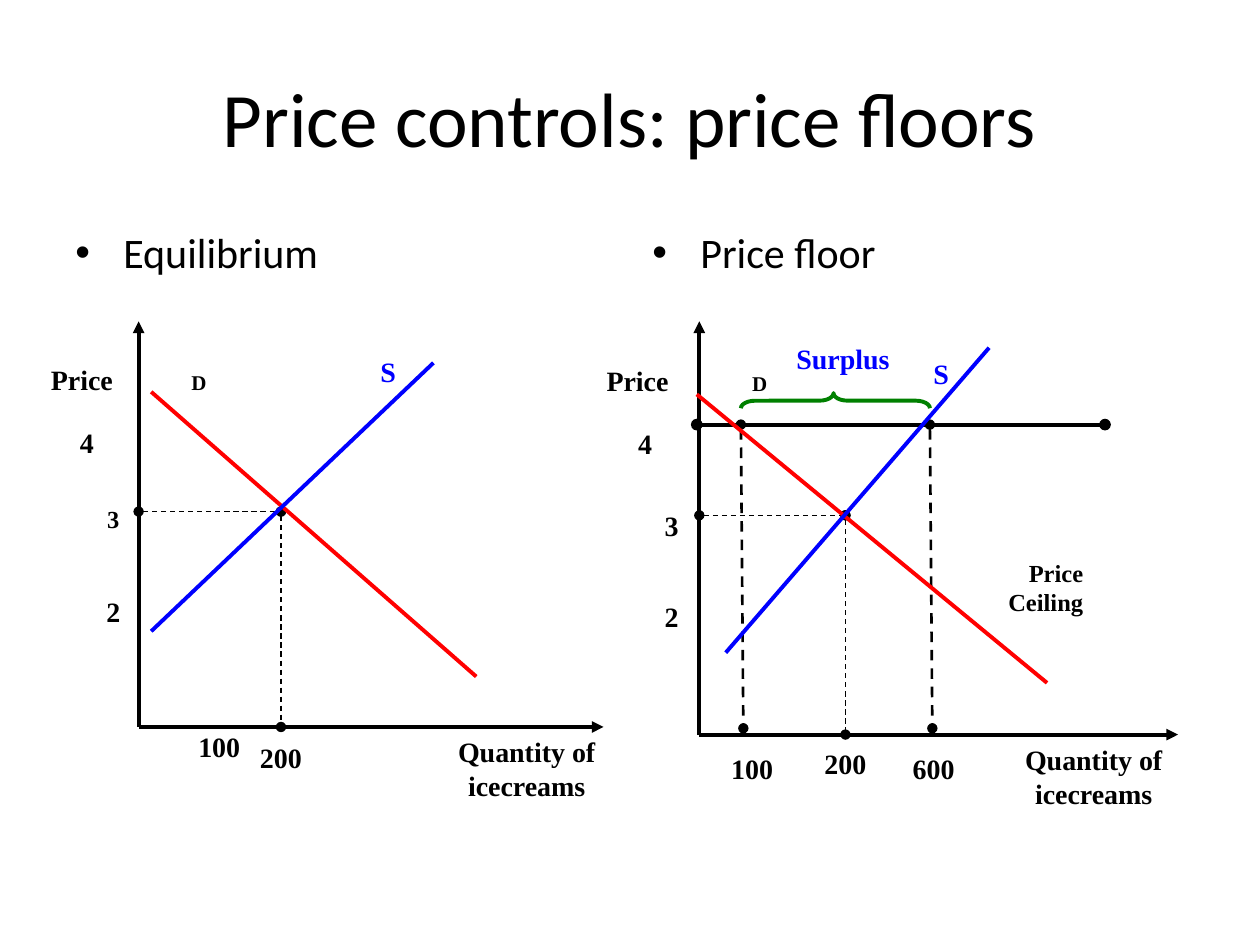
from pptx import Presentation
from pptx import util as u
from pptx.dml.color import RGBColor
from pptx.enum import dml, shapes, text
from pptx.oxml import ns, xmlchemy

COLORS = {"ink": "000000", "demand": "FF0000", "supply": "0000FF", "surplus": "008000"}
ALIGN = text.PP_ALIGN
LABEL = {"name": "Times New Roman", "bold": True}
HEADING = {"name": "Calibri", "bold": False}
BOX_HEIGHT = 0.3

# Line kinds: color, width in points, dashed, ends (at start, at finish)
LINES = {
    "axis": ("ink", 2.25, False, (None, "triangle")),
    "guide": ("ink", 0.75, True, ("oval", "oval")),
    "quantity": ("ink", 1.5, True, ("oval", "oval")),
    "floor": ("ink", 2.25, False, ("oval", "oval")),
    "demand": ("demand", 2.25, False, (None, None)),
    "supply": ("supply", 2.25, False, (None, None)),
}

# Each chart: axis corner and ends, equilibrium point, curves and labels.
# A label is text, center x, center y, then size and color where they differ.
EQUILIBRIUM = {
    "origin": (1.1, 5.77), "top": 2.55, "right": 4.79, "balance": (2.23, 4.06),
    "demand": (1.2, 3.11, 3.78, 5.37), "supply": (1.2, 5.01, 3.44, 2.88),
    "labels": [
        ("Price", 0.65, 3.01), ("4", 0.69, 3.51), ("3", 0.9, 4.12, 14), ("2", 0.9, 4.85),
        ("D", 1.58, 3.03, 12), ("S", 3.08, 2.95, 16, "supply"),
        ("100", 1.74, 5.92), ("200", 2.23, 6.01), ("Quantity of\vicecreams", 4.18, 6.1),
    ],
}
PRICE_FLOOR = {
    "origin": (5.55, 5.83), "top": 2.55, "right": 9.35, "balance": (6.71, 4.09),
    "demand": (5.53, 3.13, 8.31, 5.42), "supply": (5.76, 5.18, 7.85, 2.76),
    "labels": [
        ("Price", 5.06, 3.02), ("4", 5.12, 3.52), ("3", 5.33, 4.17), ("2", 5.33, 4.89),
        ("D", 6.03, 3.04, 12), ("S", 7.47, 2.96, 16, "supply"),
        ("Surplus", 6.69, 2.84, 16, "supply"),
        ("100", 5.97, 6.1), ("200", 6.71, 6.06), ("600", 7.41, 6.1),
        ("Quantity of\vicecreams", 8.68, 6.16),
    ],
}


def rgb(color):
    return RGBColor.from_string(COLORS[color])


def add_text(slide, words, box, size, style, color="ink", align=ALIGN.LEFT, inset=0.0,
             anchor=text.MSO_ANCHOR.MIDDLE):
    shape = slide.shapes.add_textbox(*map(u.Inches, box))
    frame = shape.text_frame
    frame_format = {
        "word_wrap": True, "vertical_anchor": anchor,
        "margin_left": u.Inches(inset), "margin_right": u.Inches(inset),
        "margin_top": u.Inches(inset / 2), "margin_bottom": u.Inches(inset / 2),
    }
    for name, value in frame_format.items():
        setattr(frame, name, value)
    paragraph = frame.paragraphs[0]
    paragraph.text = words
    paragraph.alignment = align
    for run in paragraph.runs:
        for name, value in {**style, "size": u.Pt(size)}.items():
            setattr(run.font, name, value)
        run.font.color.rgb = rgb(color)
    return paragraph


def add_label(slide, words, x, y, size=16, color="ink", align=ALIGN.CENTER):
    """Place a label around its center, as large as its lines need."""
    lines = words.split("\v")
    width = 0.2 + max(map(len, lines)) * size / 120
    height = BOX_HEIGHT * len(lines)
    add_text(slide, words, (x - width / 2, y - height / 2, width, height),
             size, LABEL, color, align)


def add_bullet(slide, words, left):
    paragraph = add_text(slide, words, (left, 1.75, 4.42, 0.6), 24, HEADING,
                         inset=0.1, anchor=text.MSO_ANCHOR.TOP)
    paragraph.space_before = u.Pt(4.8)
    properties = paragraph._p.get_or_add_pPr()
    properties.set("marL", str(u.Inches(0.38)))
    properties.set("indent", str(-u.Inches(0.38)))
    add_child(properties, "a:buFont", typeface="Arial")
    add_child(properties, "a:buChar", char="•")


def add_child(parent, tag, **attributes):
    child = xmlchemy.OxmlElement(tag)
    for name, value in attributes.items():
        child.set(name, value)
    parent.append(child)


def add_line(slide, kind, *points):
    color, width, dashed, ends = LINES[kind]
    connector = slide.shapes.add_connector(
        shapes.MSO_CONNECTOR.STRAIGHT, *map(u.Inches, points))
    connector.line.color.rgb = rgb(color)
    connector.line.width = u.Pt(width)
    if dashed:
        connector.line.dash_style = dml.MSO_LINE.DASH
    properties = connector._element.spPr
    outline = properties.find(ns.qn("a:ln"))
    for tag, end in zip(("a:headEnd", "a:tailEnd"), ends):
        if end:
            add_child(outline, tag, type=end)
    add_child(properties, "a:effectLst")


def add_brace(slide, center_x, center_y, span, depth):
    """Brace with its tip up: a left brace turned a quarter."""
    brace = slide.shapes.add_shape(
        shapes.MSO_SHAPE.LEFT_BRACE, u.Inches(center_x - depth / 2),
        u.Inches(center_y - span / 2), u.Inches(depth), u.Inches(span))
    brace.rotation = 90
    brace.adjustments[0] = 0.94
    brace.adjustments[1] = 0.51
    brace.shadow.inherit = False
    brace.fill.background()
    brace.line.color.rgb = rgb("surplus")
    brace.line.width = u.Pt(2.25)


def add_axes(slide, chart):
    x, y = chart["origin"]
    balance_x, balance_y = chart["balance"]
    add_line(slide, "axis", x, y, x, chart["top"])
    add_line(slide, "axis", x, y, chart["right"], y)
    add_line(slide, "guide", balance_x, balance_y, balance_x, y)
    add_line(slide, "guide", x, balance_y, balance_x, balance_y)


def add_curves(slide, chart):
    for kind in ("demand", "supply"):
        add_line(slide, kind, *chart[kind])
    for label in chart["labels"]:
        add_label(slide, *label)


def main():
    presentation = Presentation()
    presentation.slide_width = u.Inches(10)
    presentation.slide_height = u.Inches(7.5)
    slide = presentation.slides.add_slide(presentation.slide_layouts[6])

    # Headings
    add_text(slide, "Price controls: price floors", (0.5, 0.3, 9, 1.25), 44, HEADING,
             align=ALIGN.CENTER, inset=0.1)
    add_bullet(slide, "Equilibrium", 0.5)
    add_bullet(slide, "Price floor", 5.08)

    # Market in equilibrium
    add_axes(slide, EQUILIBRIUM)
    add_curves(slide, EQUILIBRIUM)

    # Market with a price floor and its surplus
    add_axes(slide, PRICE_FLOOR)
    add_brace(slide, 6.63, 3.18, 1.5, 0.12)
    add_line(slide, "floor", 5.53, 3.37, 8.77, 3.37)
    for x in (5.88, 7.38):
        add_line(slide, "quantity", x, 3.37, x + 0.02, 5.78)
    add_curves(slide, PRICE_FLOOR)
    add_label(slide, "Price\vCeiling", 8.09, 4.66, 14, align=ALIGN.RIGHT)

    presentation.save("out.pptx")


if __name__ == "__main__":
    main()
